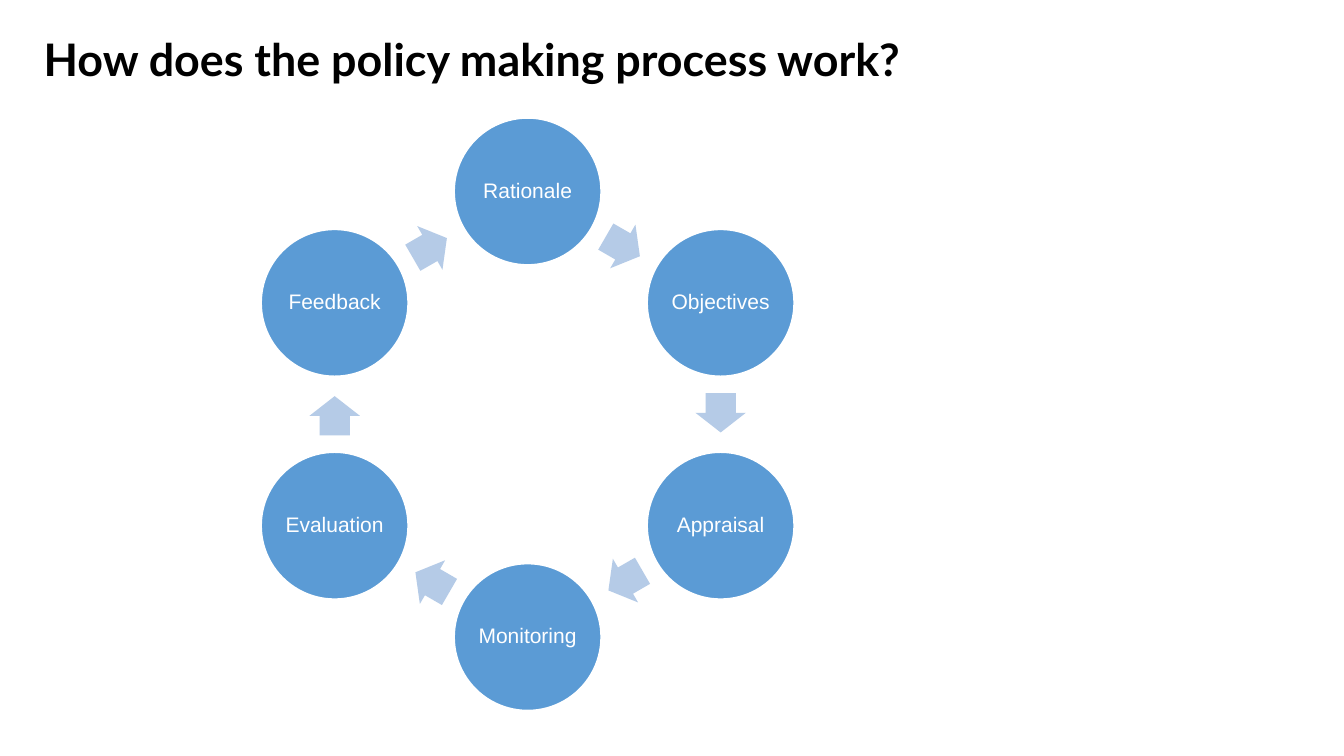
import math

import pptx
import pptx.dml.color
import pptx.enum.shapes
import pptx.enum.text
import pptx.util

BLACK = pptx.dml.color.RGBColor(0x00, 0x00, 0x00)
WHITE = pptx.dml.color.RGBColor(0xFF, 0xFF, 0xFF)
STAGE_BLUE = pptx.dml.color.RGBColor(0x5B, 0x9B, 0xD5)
ARROW_BLUE = pptx.dml.color.RGBColor(0xB5, 0xCB, 0xE7)

STAGES = ["Rationale", "Objectives", "Appraisal", "Monitoring", "Evaluation", "Feedback"]
TITLE_FONT = {"name": "Lato", "size": pptx.util.Pt(32), "bold": True}
STAGE_FONT = {"name": "Arial", "size": pptx.util.Pt(15), "bold": False}

presentation = pptx.Presentation()
presentation.slide_width = pptx.util.Inches(13.33)
presentation.slide_height = pptx.util.Inches(7.5)
slide = presentation.slides.add_slide(presentation.slide_layouts[6])

# The grid has 100 columns and 100 rows
column = presentation.slide_width / 100
row = presentation.slide_height / 100

center_x, center_y = 39.26 * column, 54.8 * row
ring_radius = 29.47 * row
stage_diameter = 19.6 * row
arrow_length, arrow_breadth = 5.2 * row, 6.67 * row
arrow_setback = 0.2 * row


def write_text(frame, text, font_format, color):
    paragraph = frame.paragraphs[0]
    run = paragraph.add_run()
    run.text = text
    for attribute, value in font_format.items():
        setattr(run.font, attribute, value)
    run.font.color.rgb = color
    return paragraph


def add_centered_shape(kind, x, y, width, height, color):
    """Add a filled shape whose middle is at x, y."""
    shape = slide.shapes.add_shape(
        kind, round(x - width / 2), round(y - height / 2), round(width), round(height)
    )
    shape.shadow.inherit = False
    shape.fill.solid()
    shape.fill.fore_color.rgb = color
    return shape


title = slide.shapes.add_textbox(
    round(2.5 * column), round(3.6 * row), round(69.6 * column), round(8.53 * row)
)
title.text_frame.word_wrap = True
title.text_frame.auto_size = pptx.enum.text.MSO_AUTO_SIZE.SHAPE_TO_FIT_TEXT
write_text(title.text_frame, "How does the policy making process work?", TITLE_FONT, BLACK)

step = 360 / len(STAGES)
for index, stage in enumerate(STAGES):
    # Stages run clockwise from the top of the ring
    angle = math.radians(index * step - 90)
    circle = add_centered_shape(
        pptx.enum.shapes.MSO_SHAPE.OVAL,
        center_x + ring_radius * math.cos(angle),
        center_y + ring_radius * math.sin(angle),
        stage_diameter,
        stage_diameter,
        STAGE_BLUE,
    )
    circle.line.color.rgb = WHITE
    circle.line.width = pptx.util.Pt(2)
    frame = circle.text_frame
    frame.word_wrap = True
    frame.vertical_anchor = pptx.enum.text.MSO_ANCHOR.MIDDLE
    for side in ("left", "right", "top", "bottom"):
        setattr(frame, f"margin_{side}", pptx.util.Inches(0.02))
    paragraph = write_text(frame, stage, STAGE_FONT, WHITE)
    paragraph.alignment = pptx.enum.text.PP_ALIGN.CENTER
    paragraph.line_spacing = 0.9

    # Each arrow sits just before the midpoint between two neighbouring stages
    heading = (index + 0.5) * step
    direction = math.radians(heading)
    middle_radius = ring_radius * math.cos(math.radians(step / 2))
    arrow = add_centered_shape(
        pptx.enum.shapes.MSO_SHAPE.RIGHT_ARROW,
        center_x + middle_radius * math.sin(direction) - arrow_setback * math.cos(direction),
        center_y - middle_radius * math.cos(direction) - arrow_setback * math.sin(direction),
        arrow_length,
        arrow_breadth,
        ARROW_BLUE,
    )
    arrow.rotation = heading
    arrow.adjustments[0] = 0.6
    arrow.adjustments[1] = 0.5
    arrow.line.fill.background()

presentation.save("out.pptx")
